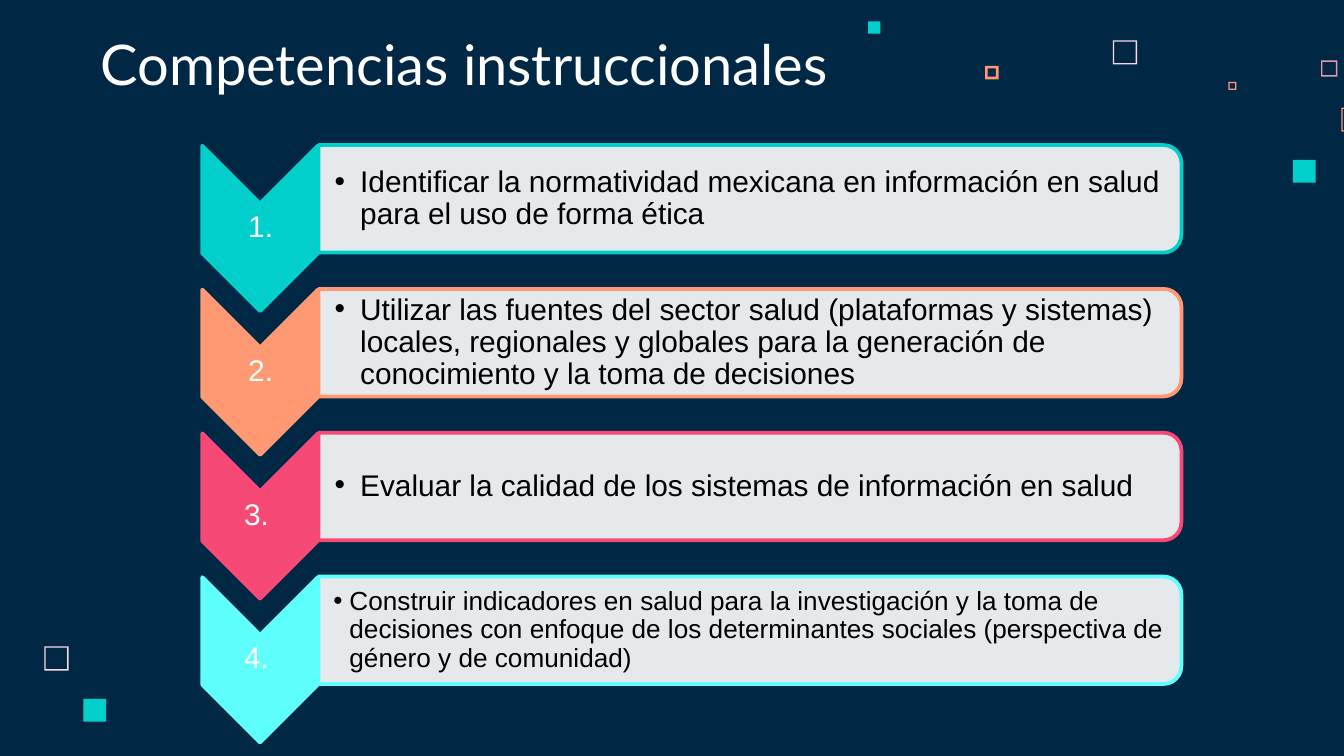
from dataclasses import dataclass

from lxml import etree
from pptx import Presentation
from pptx.dml.color import RGBColor
from pptx.enum.shapes import MSO_SHAPE
from pptx.enum.text import MSO_ANCHOR, PP_ALIGN
from pptx.oxml.ns import qn
from pptx.util import Inches, Pt

CHEVRON = MSO_SHAPE.CHEVRON
ROUND_TOP = MSO_SHAPE.ROUND_2_SAME_RECTANGLE
FRAME = MSO_SHAPE.FRAME
SQUARE = MSO_SHAPE.RECTANGLE
MIDDLE, BOTTOM = MSO_ANCHOR.MIDDLE, MSO_ANCHOR.BOTTOM
CENTER, LEFT = PP_ALIGN.CENTER, PP_ALIGN.LEFT

WHITE, BLACK, NAVY = "FFFFFF", "000000", "002845"
TEAL, ORANGE, PINK, AQUA = "00CFCC", "FF9973", "F64975", "5EFFFD"
PALE, ROSE = "FFD6E1", "E898AC"
ROW_PITCH = 1.07


@dataclass
class Decoration:
    x: float
    y: float
    size: float
    color: str
    border: float = 0.01


@dataclass
class Competency:
    number: str
    text: str
    color: str
    size: int = 16
    inset: float = 0.12
    indent: float = 0.19


DECORATIONS = [
    Decoration(8.28, 0.3, 0.18, PALE),
    Decoration(9.83, 0.45, 0.12, ROSE),
    Decoration(9.14, 0.61, 0.06, ORANGE),
    Decoration(9.98, 0.8, 0.18, ORANGE),
    Decoration(9.62, 1.19, 0.17, TEAL, 0),
    Decoration(7.33, 0.49, 0.1, ORANGE, 0.02),
    Decoration(6.46, 0.16, 0.09, TEAL, 0),
    Decoration(0.33, 4.81, 0.18, PALE),
    Decoration(0.62, 5.2, 0.17, TEAL, 0),
]

COMPETENCIES = [
    Competency("1.", "Identificar la normatividad mexicana en información en salud "
               "para el uso de forma ética", TEAL),
    Competency("2.", "Utilizar las fuentes del sector salud (plataformas y sistemas) "
               "locales, regionales y globales para la generación de conocimiento "
               "y la toma de decisiones", ORANGE),
    Competency("3. ", "Evaluar la calidad de los sistemas de información en salud", PINK),
    Competency("4. ", "Construir indicadores en salud para la investigación y la toma de "
               "decisiones con enfoque de los determinantes sociales (perspectiva de "
               "género y de comunidad)", AQUA, 14, 0.11, 0.12),
]


def rgb(value: str) -> RGBColor:
    return RGBColor.from_string(value)


def add_filled(s, kind, x: float, y: float, w: float, h: float, fill: str):
    sp = s.shapes.add_shape(kind, Inches(x), Inches(y), Inches(w), Inches(h))
    sp.shadow.inherit = False
    sp.fill.solid()
    sp.fill.fore_color.rgb = rgb(fill)
    sp.line.fill.background()
    return sp


def add_turned(s, kind, x: float, y: float, w: float, h: float, fill: str, line: str):
    sp = add_filled(s, kind, x, y, w, h, fill)
    sp.rotation = 90
    sp.line.color.rgb = rgb(line)
    sp.line.width = Pt(2)
    return sp


def add_text(s, text: str, x: float, y: float, w: float, h: float, size: int,
             color: str, font: str = "Arial", anchor=MIDDLE, align=LEFT,
             inset: float = 0.01, left_inset: float = 0.01, spacing: float = 0.9):
    tf = s.shapes.add_textbox(Inches(x), Inches(y), Inches(w), Inches(h)).text_frame
    tf.word_wrap = True
    tf.vertical_anchor = anchor
    tf.margin_left = Inches(left_inset)
    tf.margin_top = tf.margin_right = tf.margin_bottom = Inches(inset)
    tf.text = text
    p = tf.paragraphs[0]
    p.alignment = align
    p.line_spacing = spacing
    r = p.runs[0]
    r.font.size = Pt(size)
    r.font.name = font
    r.font.color.rgb = rgb(color)
    return p


def add_bullet(p, indent: float) -> None:
    p.level = 1
    pPr = p._p.get_or_add_pPr()
    pPr.set("marL", str(Inches(indent)))
    pPr.set("indent", str(-Inches(indent)))
    color = etree.SubElement(pPr, qn("a:buClr"))
    etree.SubElement(color, qn("a:srgbClr"), val=BLACK)
    etree.SubElement(pPr, qn("a:buFont"), typeface="Arial")
    etree.SubElement(pPr, qn("a:buChar"), char="•")


def set_alpha(sp, percent: int) -> None:
    color = sp.fill._xPr.find(qn("a:solidFill"))[0]
    etree.SubElement(color, qn("a:alpha"), val=str(percent * 1000))


def draw_decoration(s, d: Decoration) -> None:
    sp = add_filled(s, FRAME if d.border else SQUARE, d.x, d.y, d.size, d.size, d.color)
    if d.border:
        sp.adjustments[0] = d.border / d.size


def draw_competency(s, c: Competency, offset: float) -> None:
    add_turned(s, CHEVRON, 1.32, 1.27 + offset, 1.23, 0.86, c.color, c.color)
    add_text(s, c.number, 1.51, 1.51 + offset, 0.86, 0.37, 16, WHITE, align=CENTER)
    panel = add_turned(s, ROUND_TOP, 5.18, -1.73 + offset, 0.8, 6.42, WHITE, c.color)
    set_alpha(panel, 90)
    p = add_text(s, c.text, 2.37, 1.12 + offset, 6.38, 0.72, c.size, BLACK,
                 left_inset=c.inset)
    add_bullet(p, c.indent)


def main() -> None:
    prs = Presentation()
    prs.slide_width = Inches(10)
    prs.slide_height = prs.slide_width * 9 // 16
    s = prs.slides.add_slide(prs.slide_layouts[6])
    s.background.fill.solid()
    s.background.fill.fore_color.rgb = rgb(NAVY)
    for d in DECORATIONS:
        draw_decoration(s, d)
    add_text(s, "Competencias instruccionales", 0.65, 0.19, 5.85, 0.63, 30, WHITE,
             font="Lato", anchor=BOTTOM, inset=0.1, left_inset=0.1, spacing=1.0)
    for i, c in enumerate(COMPETENCIES):
        draw_competency(s, c, i * ROW_PITCH)
    prs.save("out.pptx")


if __name__ == "__main__":
    main()
